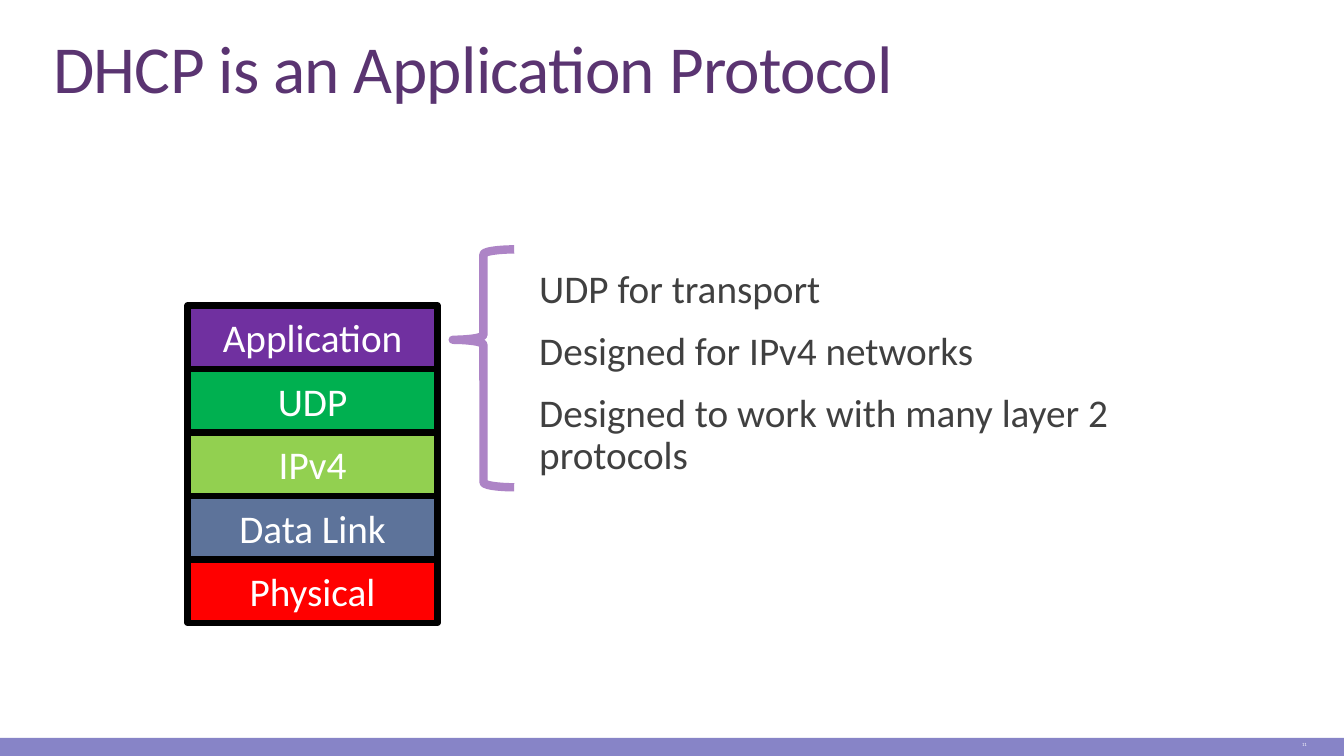
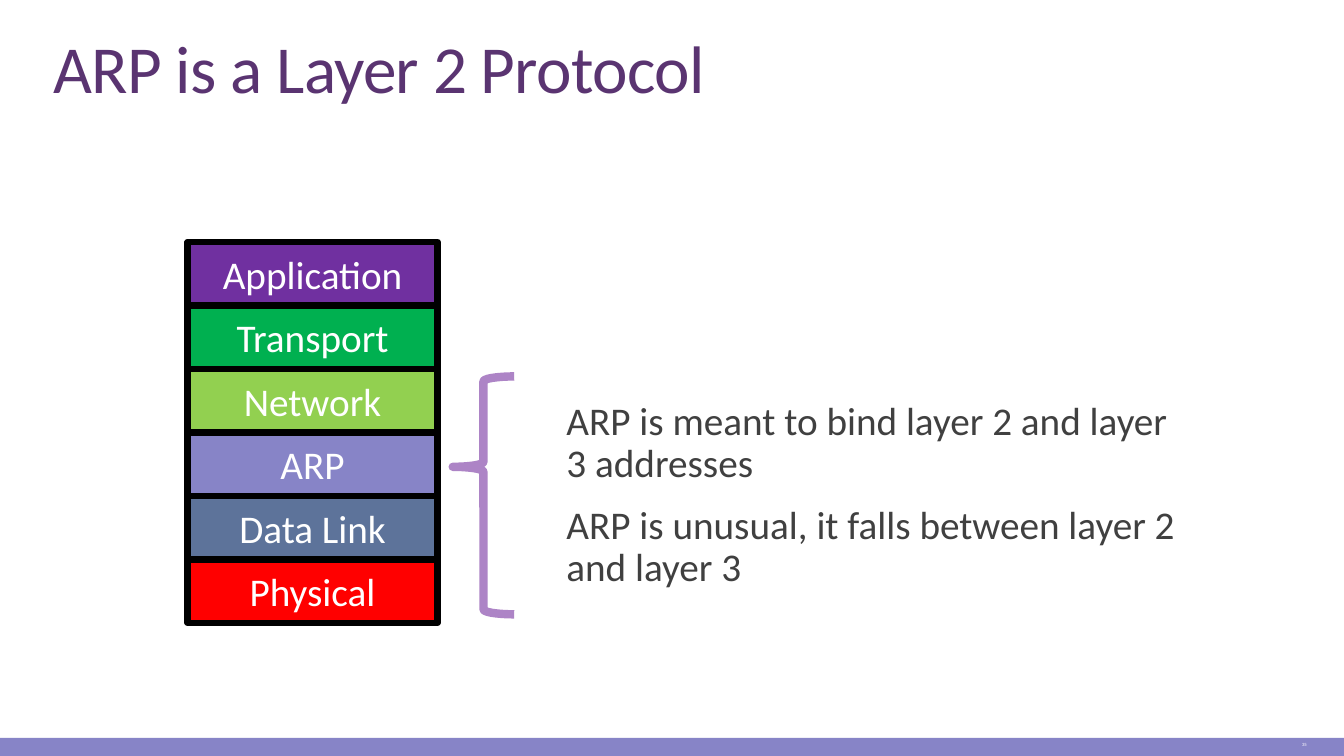
import dataclasses
import typing

import pptx
import pptx.dml.color
import pptx.enum.shapes
import pptx.enum.text
import pptx.shapes.autoshape
import pptx.slide
import pptx.util

Inches = pptx.util.Inches
Pt = pptx.util.Pt
ALIGN = pptx.enum.text.PP_ALIGN
ANCHOR = pptx.enum.text.MSO_ANCHOR
SHAPE = pptx.enum.shapes.MSO_SHAPE

FONT = "Calibri"
WHITE = "FFFFFF"
BLACK = "000000"
GREY = "404040"
PLUM = "5A3471"
LILAC = "8784C7"
MAUVE = "AD84C6"
PURPLE = "7030A0"
GREEN = "00B050"
LIME = "92D050"
SLATE = "5D739A"
RED = "FF0000"

WIDE, HIGH = 13.33, 7.5
BAND = 0.18
STACK_LEFT, STACK_BASE = 1.86, 6.18
ROW_WIDE, ROW_HIGH = 2.48, 0.63
BRACE_HIGH = 2.36
BRACE_RISE = 0.87


class Box(typing.NamedTuple):
    left: float
    top: float
    width: float
    height: float

    def spread(self) -> tuple[pptx.util.Length, ...]:
        return tuple(Inches(side) for side in self)


class Layer(typing.NamedTuple):
    name: str
    fill: str


@dataclasses.dataclass
class Page:
    title: str
    number: str
    layers: list[Layer]
    focus: int
    points: list[str]
    points_box: Box


APP = "Application"
LOW = [Layer("Data Link", SLATE), Layer("Physical", RED)]

PAGES = [
    Page(
        "DHCP is an Application Protocol",
        "11",
        [Layer(APP, PURPLE), Layer("UDP", GREEN), Layer("IPv4", LIME), *LOW],
        0,
        [
            "UDP for transport",
            "Designed for IPv4 networks",
            "Designed to work with many layer 2 protocols",
        ],
        Box(5.25, 2.53, 6.4, 2.36),
    ),
    Page(
        "ARP is a Layer 2 Protocol",
        "35",
        [
            Layer(APP, PURPLE),
            Layer("Transport", GREEN),
            Layer("Network", LIME),
            Layer("ARP", LILAC),
            *LOW,
        ],
        3,
        [
            "ARP is meant to bind layer 2 and layer 3 addresses",
            "ARP is unusual, it falls between layer 2 and layer 3",
        ],
        Box(5.52, 3.74, 6.4, 2.36),
    ),
]


def tint(code: str) -> pptx.dml.color.RGBColor:
    return pptx.dml.color.RGBColor.from_string(code)


def write(
    shape: pptx.shapes.autoshape.Shape,
    *lines: str,
    size: float = 28,
    color: str = WHITE,
    align: ALIGN = ALIGN.LEFT,
    anchor: ANCHOR = ANCHOR.MIDDLE,
    pitch: float = 1.0,
    gap: float = 0,
    track: float = 0,
) -> None:
    frame = shape.text_frame
    frame.word_wrap = True
    frame.vertical_anchor = anchor
    for spot, line in enumerate(lines):
        para = frame.paragraphs[0] if spot == 0 else frame.add_paragraph()
        para.alignment = align
        para.line_spacing = pitch
        if spot:
            para.space_before = Pt(gap)
        run = para.add_run()
        run.text = line
        run.font.name = FONT
        run.font.size = Pt(size)
        run.font.color.rgb = tint(color)
        if track:
            run.font._element.set("spc", str(round(track * 100)))


def draw(
    slide: pptx.slide.Slide,
    kind: SHAPE,
    box: Box,
    fill: str | None = None,
    line: str | None = None,
    weight: float = 0,
) -> pptx.shapes.autoshape.Shape:
    shape = slide.shapes.add_shape(kind, *box.spread())
    shape.shadow.inherit = False
    if fill:
        shape.fill.solid()
        shape.fill.fore_color.rgb = tint(fill)
    else:
        shape.fill.background()
    if line:
        shape.line.color.rgb = tint(line)
        shape.line.width = Pt(weight)
    else:
        shape.line.fill.background()
    return shape


def label(slide: pptx.slide.Slide, box: Box, *lines: str, **style: typing.Any) -> None:
    write(slide.shapes.add_textbox(*box.spread()), *lines, **style)


def frame_page(slide: pptx.slide.Slide, page: Page) -> None:
    top = HIGH - BAND
    draw(slide, SHAPE.RECTANGLE, Box(0, top, WIDE, BAND), fill=LILAC)
    label(
        slide, Box(0.43, 0.31, 12.64, 0.8), page.title,
        size=48, color=PLUM, anchor=ANCHOR.BOTTOM, pitch=0.85, track=-0.5,
    )
    label(
        slide, Box(11.63, top, 1.43, 0.14), page.number,
        size=3.4, align=ALIGN.RIGHT,
    )


def draw_stack(slide: pptx.slide.Slide, page: Page) -> None:
    first = STACK_BASE - len(page.layers) * ROW_HIGH
    for spot, layer in enumerate(page.layers):
        box = Box(STACK_LEFT, first + spot * ROW_HIGH, ROW_WIDE, ROW_HIGH)
        row = draw(slide, SHAPE.RECTANGLE, box, layer.fill, BLACK, 4.5)
        write(row, layer.name, align=ALIGN.CENTER)

    middle = first + (page.focus + 0.5) * ROW_HIGH
    brace = draw(
        slide, SHAPE.LEFT_BRACE,
        Box(4.49, middle - BRACE_RISE, 0.61, BRACE_HIGH),
        line=MAUVE, weight=6,
    )
    brace.adjustments[0] = 0.08
    brace.adjustments[1] = 0.38


def main() -> None:
    deck = pptx.Presentation()
    deck.slide_width = Inches(WIDE)
    deck.slide_height = Inches(HIGH)
    for page in PAGES:
        slide = deck.slides.add_slide(deck.slide_layouts[6])
        frame_page(slide, page)
        draw_stack(slide, page)
        label(
            slide, page.points_box, *page.points,
            color=GREY, pitch=0.9, gap=14,
        )
    deck.save("out.pptx")


if __name__ == "__main__":
    main()
